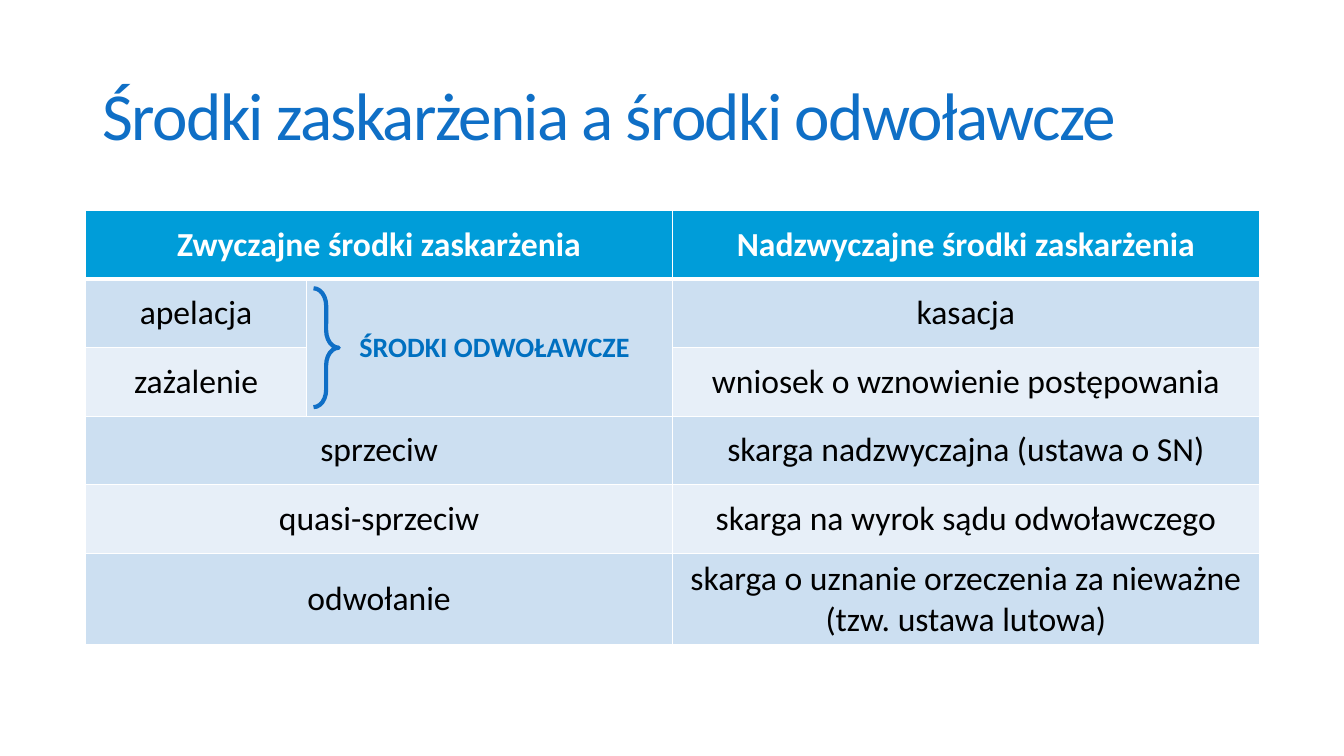
from lxml.etree import SubElement
from pptx import Presentation
from pptx.dml.color import RGBColor
from pptx.enum.shapes import MSO_SHAPE
from pptx.enum.text import MSO_ANCHOR, PP_ALIGN
from pptx.oxml.ns import qn
from pptx.util import Inches, Pt

WHITE = RGBColor(0xFF, 0xFF, 0xFF)
BLACK = RGBColor(0x00, 0x00, 0x00)
TITLE_BLUE = RGBColor(0x0F, 0x6F, 0xC6)
LABEL_BLUE = RGBColor(0x00, 0x70, 0xC0)
HEADER_BLUE = RGBColor(0x00, 0x9D, 0xD9)
BAND_DARK = RGBColor(0xCC, 0xDF, 0xF1)
BAND_LIGHT = RGBColor(0xE7, 0xEF, 0xF8)

HEADER_FONT = {"size": Pt(24), "bold": True, "color": WHITE}
BODY_FONT = {"size": Pt(24), "bold": False, "color": BLACK}
LABEL_FONT = {"size": Pt(20), "bold": True, "color": LABEL_BLUE}
TITLE_FONT = {"size": Pt(48), "bold": False, "color": TITLE_BLUE}

TABLE_LEFT, TABLE_TOP = 0.85, 2.09
COLUMN_WIDTHS = [2.19, 3.63, 5.82]
ROW_HEIGHT = 0.68
ROWS = [
    ["Zwyczajne środki zaskarżenia", "", "Nadzwyczajne środki zaskarżenia"],
    ["apelacja", "ŚRODKI ODWOŁAWCZE", "kasacja"],
    ["zażalenie", "", "wniosek o wznowienie postępowania"],
    ["sprzeciw", "", "skarga nadzwyczajna (ustawa o SN)"],
    ["quasi-sprzeciw", "", "skarga na wyrok sądu odwoławczego"],
    ["odwołanie", "", "skarga o uznanie orzeczenia za nieważne\n(tzw. ustawa lutowa)"],
]


def write_text(text_frame, text, font_values, alignment):
    text_frame.text = text
    for paragraph in text_frame.paragraphs:
        paragraph.alignment = alignment
        for run in paragraph.runs:
            run.font.name = "Calibri"
            for name, value in font_values.items():
                if name == "color":
                    run.font.color.rgb = value
                else:
                    setattr(run.font, name, value)


def add_borders(cell, bottom_width):
    properties = cell._tc.get_or_add_tcPr()
    for side, width in {"L": 1, "R": 1, "T": 1, "B": bottom_width}.items():
        line = SubElement(properties, qn(f"a:ln{side}"), w=str(Pt(width)))
        fill = SubElement(line, qn("a:solidFill"))
        SubElement(fill, qn("a:srgbClr"), val=str(WHITE))


presentation = Presentation()
presentation.slide_width = Inches(13.33)
presentation.slide_height = Inches(7.5)
slide = presentation.slides.add_slide(presentation.slide_layouts[6])

# Title
title = slide.shapes.add_textbox(Inches(0.92), Inches(0.28), Inches(12.02), Inches(1.81))
title.text_frame.word_wrap = True
title.text_frame.vertical_anchor = MSO_ANCHOR.MIDDLE
write_text(title.text_frame, "Środki zaskarżenia a środki odwoławcze", TITLE_FONT, PP_ALIGN.LEFT)
title_paragraph = title.text_frame.paragraphs[0]
title_paragraph.line_spacing = 0.85
title_paragraph.runs[0].font._element.set("spc", "-120")

# Table grid
table = slide.shapes.add_table(
    len(ROWS), len(COLUMN_WIDTHS), Inches(TABLE_LEFT), Inches(TABLE_TOP),
    Inches(sum(COLUMN_WIDTHS)), Inches(ROW_HEIGHT * len(ROWS))).table
for column, width in zip(table.columns, COLUMN_WIDTHS):
    column.width = Inches(width)
for row in table.rows:
    row.height = Inches(ROW_HEIGHT)

# Cells: a header row, then alternating bands
for row_index, row_texts in enumerate(ROWS):
    is_header = row_index == 0
    band = HEADER_BLUE if is_header else BAND_DARK if row_index % 2 else BAND_LIGHT
    for column_index, text in enumerate(row_texts):
        cell = table.cell(row_index, column_index)
        add_borders(cell, 3 if is_header else 1)
        cell.fill.solid()
        cell.fill.fore_color.rgb = band
        cell.vertical_anchor = MSO_ANCHOR.MIDDLE
        font_values = HEADER_FONT if is_header else BODY_FONT
        write_text(cell.text_frame, text, font_values, PP_ALIGN.CENTER)

# Label beside the brace, across two rows
label_cell = table.cell(1, 1)
label_cell.margin_left = Inches(0.2)
write_text(label_cell.text_frame, ROWS[1][1], LABEL_FONT, PP_ALIGN.CENTER)
label_cell.merge(table.cell(2, 1))
for row_index in (0, 3, 4, 5):
    table.cell(row_index, 0).merge(table.cell(row_index, 1))

# Brace joining the two appeal measures
brace = slide.shapes.add_shape(
    MSO_SHAPE.RIGHT_BRACE, Inches(3.11), Inches(2.86), Inches(0.25), Inches(1.18))
brace.adjustments[0] = 0.69
brace.adjustments[1] = 0.5
brace.shadow.inherit = False
brace.fill.background()
brace.line.color.rgb = TITLE_BLUE
brace.line.width = Pt(3)

presentation.save("out.pptx")
